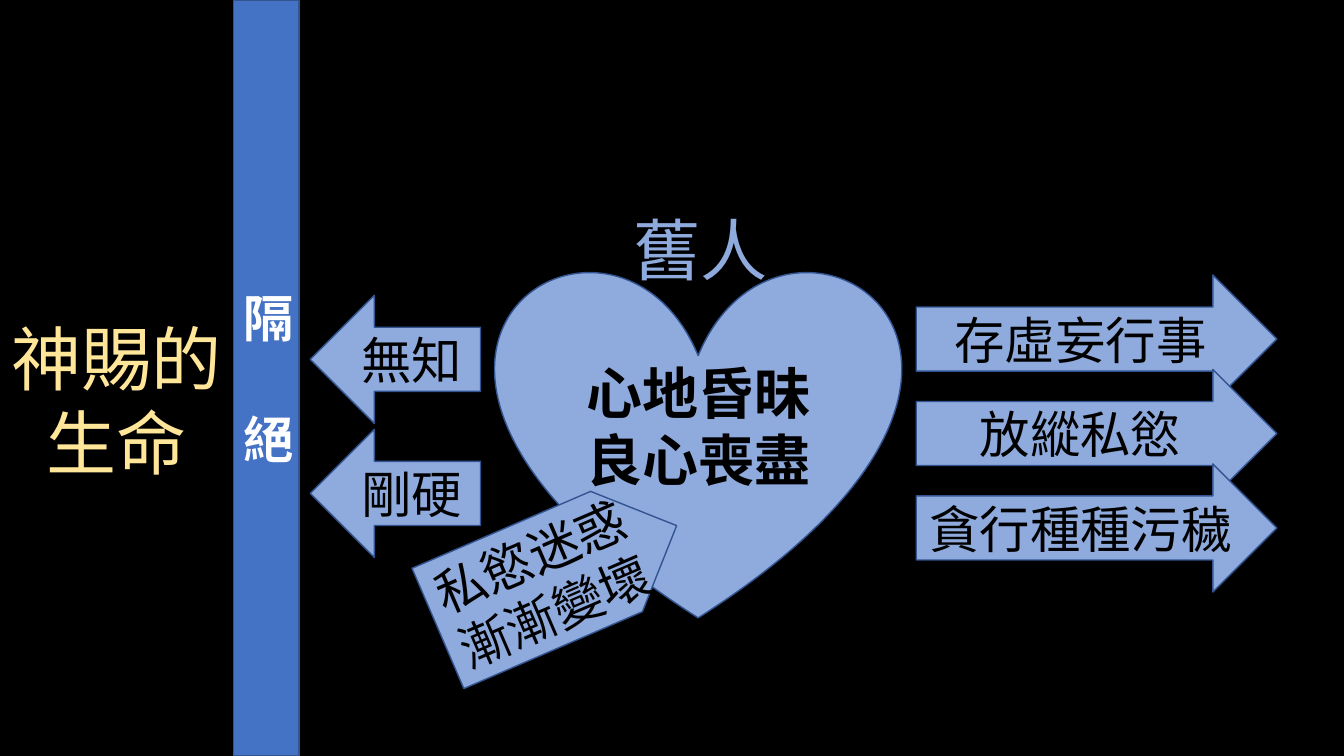
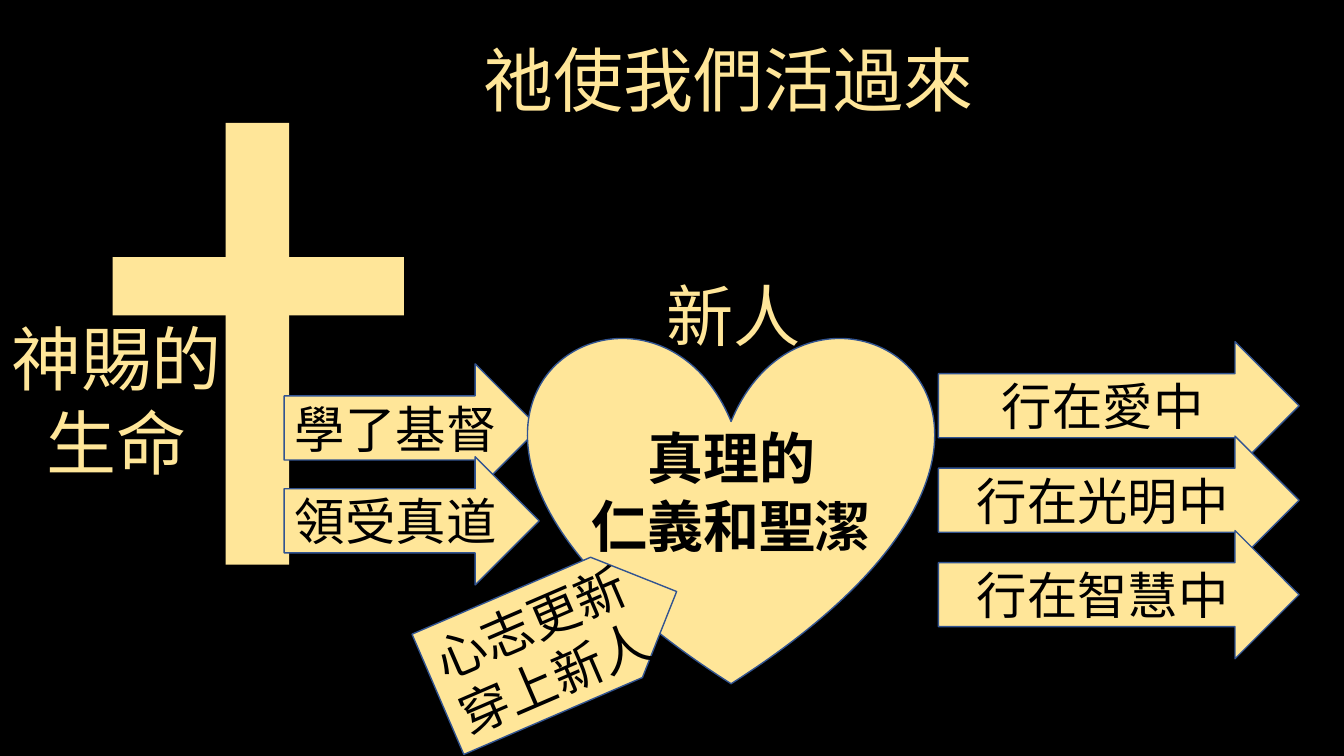
"""Build two slides contrasting the old self and the new self."""
from dataclasses import dataclass
from typing import Optional

from pptx import Presentation, util as u
from pptx.dml import color as dml
from pptx.enum import shapes, text

COLOURS = {"black": "000000", "white": "FFFFFF", "blue": "4472C4",
           "outline": "325491", "old": "8FAADC", "new": "FFE699"}
KINDS = shapes.MSO_SHAPE
ARROW_HEIGHT = 3.23
HEART_WIDTH, HEART_HEIGHT = 10.19, 8.81


@dataclass(frozen=True)
class Area:
    left: float
    top: float
    width: float
    height: float

    def lengths(self) -> tuple:
        return tuple(u.Cm(value) for value in (self.left, self.top, self.width, self.height))


@dataclass(frozen=True)
class Style:
    size: int = 36
    colour: str = "black"
    bold: bool = False
    font: str = "Arial"
    gap: float = 0


@dataclass(frozen=True)
class ArrowStack:
    kind: shapes.MSO_SHAPE
    left: float
    top: float
    width: float
    step: float
    labels: tuple[str, ...]


@dataclass(frozen=True)
class Person:
    colour: str
    caption: str
    heart_left: float
    heart_top: float
    heart_lines: tuple[str, ...]
    heart_text_width: float
    pennant_lines: tuple[str, ...]
    causes: ArrowStack
    results: ArrowStack


OLD_SELF = Person(
    "old", "舊人", 12.5, 6.76, ("心地昏昧", "良心喪盡"), 6.32, ("私慾迷惑", "漸漸變壞"),
    ArrowStack(KINDS.LEFT_ARROW, 7.82, 7.44, 4.29, 3.38, ("無知", "剛硬")),
    ArrowStack(KINDS.RIGHT_ARROW, 23.09, 6.93, 9.09, 2.38,
               ("存虛妄行事", "放縱私慾", "貪行種種污穢")))
NEW_SELF = Person(
    "new", "新人", 13.33, 8.42, ("真理的", "仁義和聖潔"), 7.82, ("心志更新", "穿上新人"),
    ArrowStack(KINDS.RIGHT_ARROW, 7.16, 9.17, 6.43, 2.34, ("學了基督", "領受真道")),
    ArrowStack(KINDS.RIGHT_ARROW, 23.65, 8.61, 9.09, 2.38,
               ("行在愛中", "行在光明中", "行在智慧中")))


def rgb(name: str) -> dml.RGBColor:
    return dml.RGBColor.from_string(COLOURS[name])


def write(frame, lines: tuple[str, ...], style: Style) -> None:
    frame.word_wrap = True
    for index, line in enumerate(lines):
        para = frame.paragraphs[0] if index == 0 else frame.add_paragraph()
        para.alignment = text.PP_ALIGN.CENTER
        if index and style.gap:
            para.space_before = u.Pt(style.gap)
        span = para.add_run()
        span.text = line
        span.font.size = u.Pt(style.size)
        span.font.name = style.font
        span.font.bold = style.bold
        span.font.color.rgb = rgb(style.colour)


def add_text(page, area: Area, lines: tuple[str, ...], style: Style) -> None:
    box = page.shapes.add_textbox(*area.lengths())
    write(box.text_frame, lines, style)
    box.text_frame.auto_size = text.MSO_AUTO_SIZE.SHAPE_TO_FIT_TEXT


def add_block(page, kind: shapes.MSO_SHAPE, area: Area, fill: str,
              lines: tuple[str, ...] = (), style: Style = Style(),
              outline: Optional[str] = "outline", rotation: float = 0) -> None:
    block = page.shapes.add_shape(kind, *area.lengths())
    block.shadow.inherit = False
    block.rotation = rotation
    block.fill.solid()
    block.fill.fore_color.rgb = rgb(fill)
    if outline:
        block.line.color.rgb = rgb(outline)
        block.line.width = u.Pt(1)
    else:
        block.line.fill.background()
    block.text_frame.vertical_anchor = text.MSO_ANCHOR.MIDDLE
    write(block.text_frame, lines, style)


def add_arrows(page, stack: ArrowStack, fill: str) -> None:
    for index, label in enumerate(stack.labels):
        area = Area(stack.left, stack.top + index * stack.step, stack.width, ARROW_HEIGHT)
        add_block(page, stack.kind, area, fill, (label,))


def add_person(page, person: Person) -> None:
    left, top = person.heart_left, person.heart_top
    add_arrows(page, person.causes, person.colour)
    add_text(page, Area(left + 2.65, top - 1.63, 5.03, 2.31), (person.caption,),
             Style(48, person.colour, font="Roboto"))
    add_block(page, KINDS.HEART, Area(left, top, HEART_WIDTH, HEART_HEIGHT), person.colour)
    text_left = left + (HEART_WIDTH - person.heart_text_width) / 2
    add_text(page, Area(text_left, top + 2.14, person.heart_text_width, 3.68),
             person.heart_lines, Style(40, bold=True))
    add_block(page, KINDS.PENTAGON, Area(10.77, top + 6.13, 6.55, 3.3), person.colour,
              person.pennant_lines, rotation=336.7)
    add_arrows(page, person.results, person.colour)


def add_page(deck):
    page = deck.slides.add_slide(deck.slide_layouts[6])
    page.background.fill.solid()
    page.background.fill.fore_color.rgb = rgb("black")
    add_text(page, Area(-0.28, 7.82, 6.43, 4.52), ("神賜的生命",), Style(50, "new"))
    return page


def build_old_self(deck) -> None:
    page = add_page(deck)
    add_block(page, KINDS.RECTANGLE, Area(5.89, 0, 1.65, 19.05), "blue", ("隔", "絕"),
              Style(colour="white", bold=True, gap=43))
    add_person(page, OLD_SELF)


def build_new_self(deck) -> None:
    page = add_page(deck)
    add_text(page, Area(9.73, 0.79, 17.27, 2.39), ("祂使我們活過來",),
             Style(50, "new", font="Calibri"))
    for beam in (Area(5.69, 3.1, 1.6, 11.13), Area(2.84, 6.48, 7.34, 1.47)):
        add_block(page, KINDS.RECTANGLE, beam, "new", outline=None)
    add_person(page, NEW_SELF)


def main() -> None:
    deck = Presentation()
    deck.slide_width, deck.slide_height = u.Cm(33.87), u.Cm(19.05)
    build_old_self(deck)
    build_new_self(deck)
    deck.save("out.pptx")


if __name__ == "__main__":
    main()
